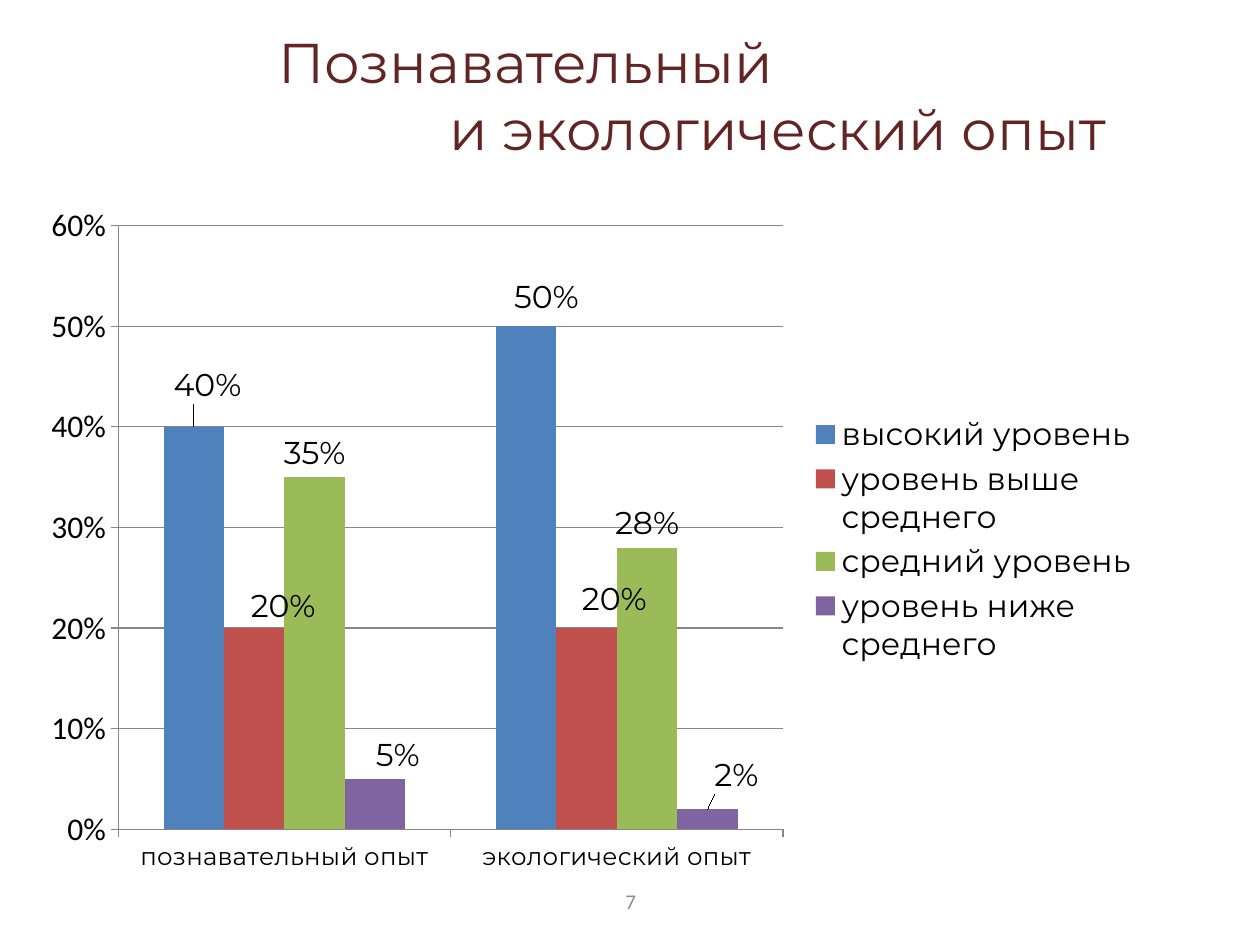
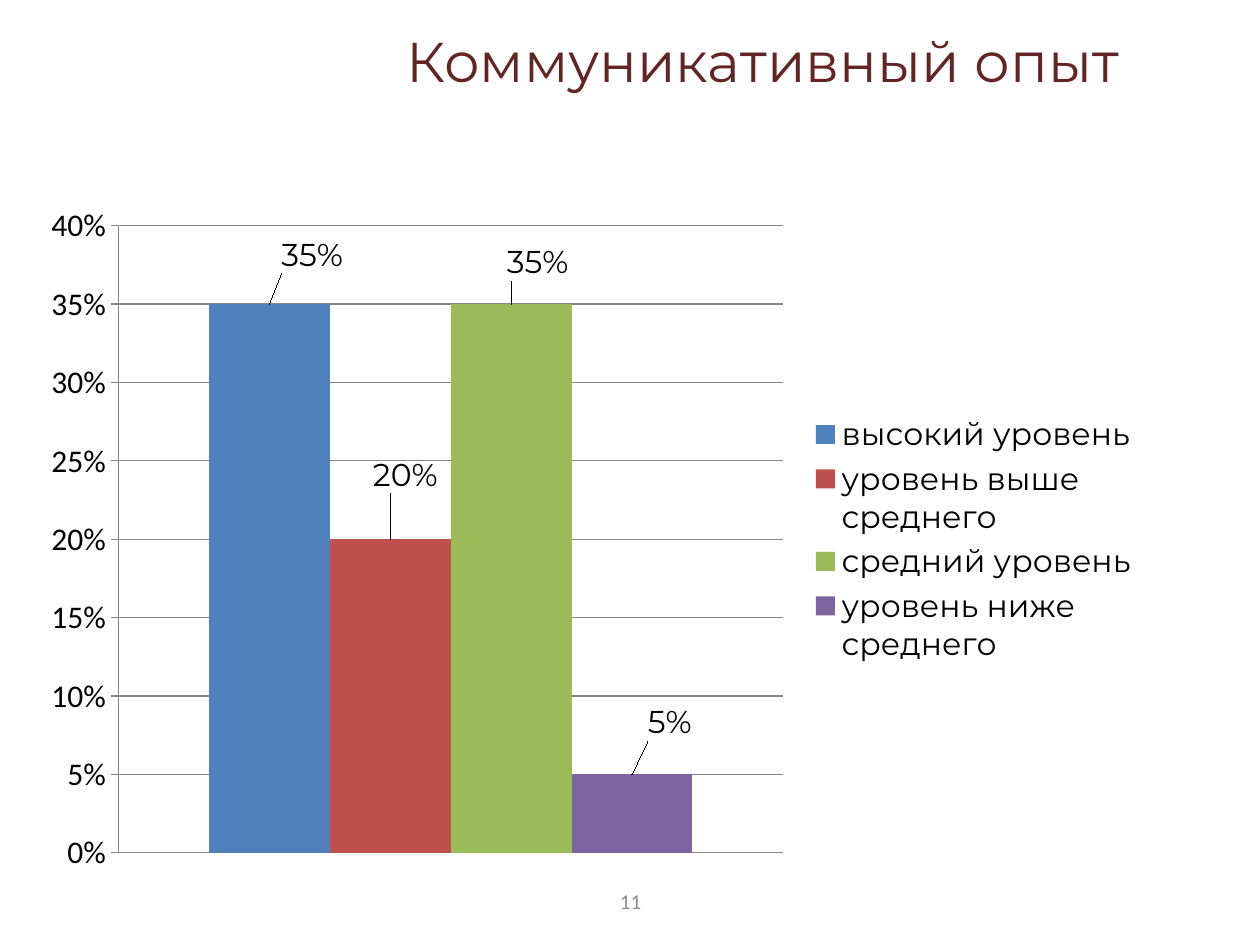
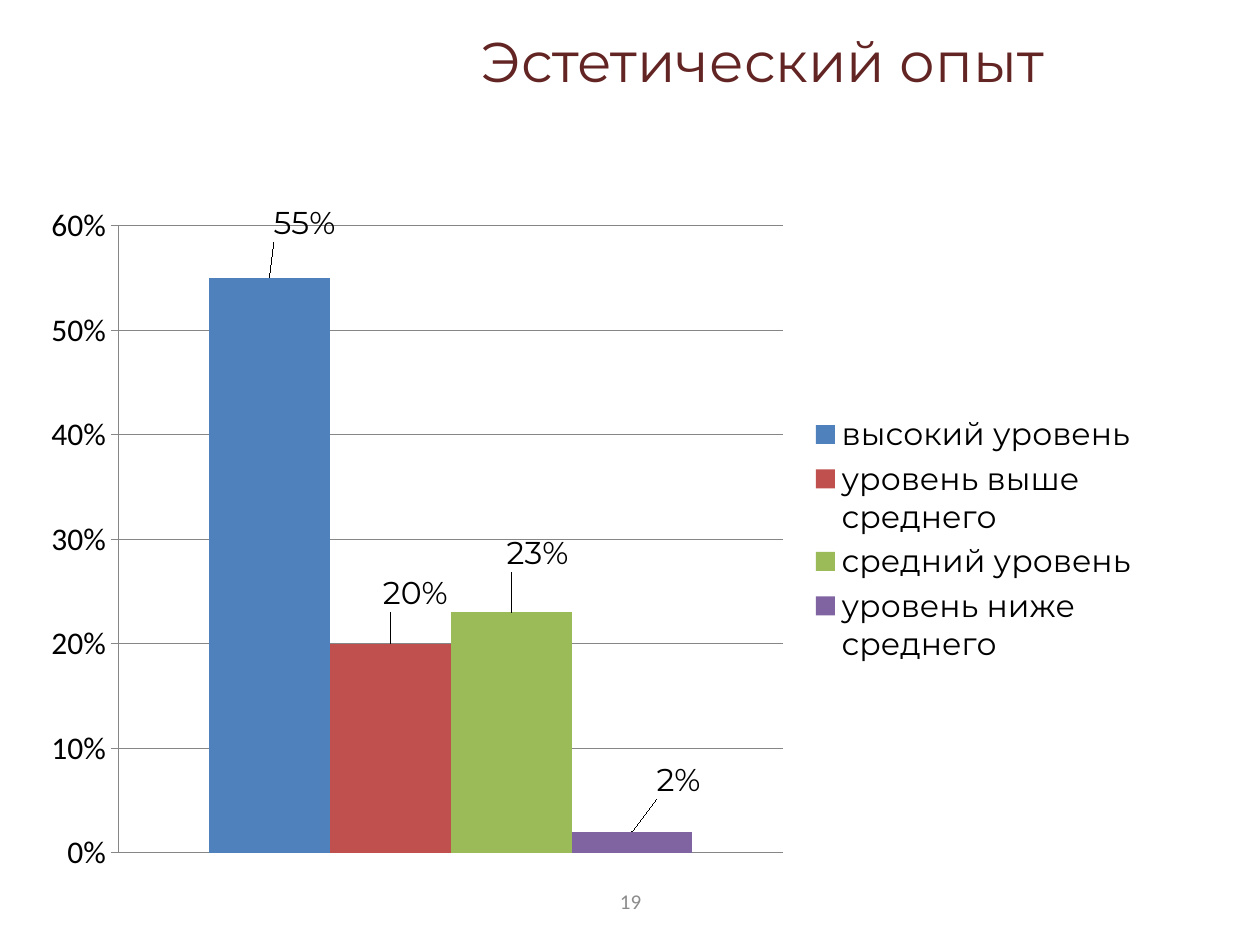
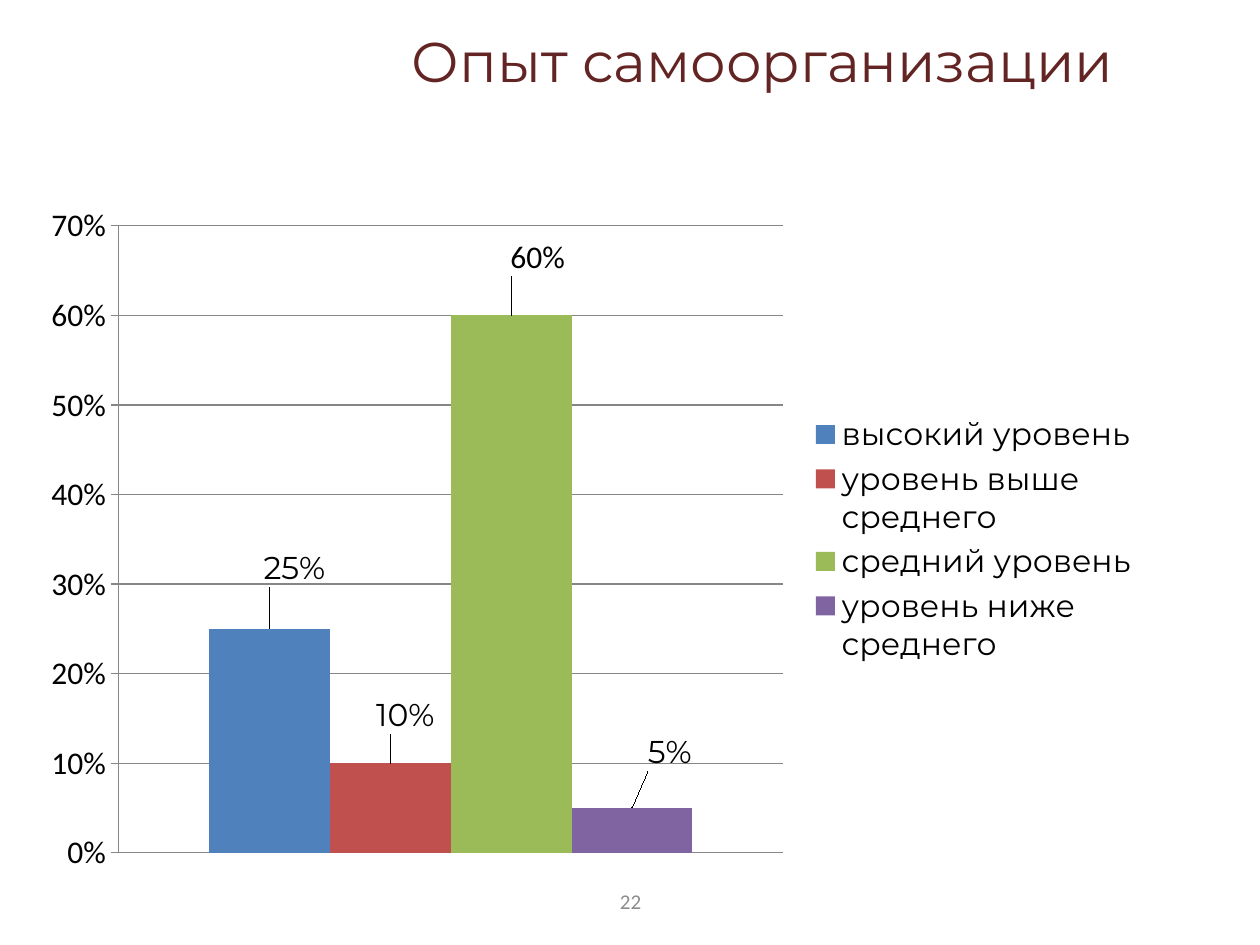
from lxml import etree
from pptx import Presentation
from pptx.chart.data import CategoryChartData
from pptx.dml.color import RGBColor
from pptx.enum import chart as ch, text as tx
from pptx.oxml.ns import qn
from pptx.util import Inches, Pt

HUES = {"title": "632523", "page": "8C8C8C", "text": "000000", "rule": "868686"}
HEAD, BODY = "Montserrat", "Calibri"
WIDE, HIGH = 8.91, 5.5  # chart size

LEVELS = [
    ("высокий уровень", "4F81BD"),
    ("уровень выше среднего", "C0504D"),
    ("средний уровень", "9BBB59"),
    ("уровень ниже среднего", "8064A2"),
]

# "vals" and "moves" hold one row per level and one item per category;
# a move shifts a label from its usual place, in inches (None keeps it there).
SLIDES = [
    {
        "page": "7",
        "title": ["Познавательный", "и экологический опыт"],
        "cats": ["познавательный опыт", "экологический опыт"],
        "vals": [(0.4, 0.5), (0.2, 0.2), (0.35, 0.28), (0.05, 0.02)],
        "moves": [
            [(0.11, -0.14), (0.16, -0.04)],
            [(0.23, 0.02), (0.22, -0.04)],
            [None, None],
            [(0.18, 0), (0.23, -0.08)],
        ],
    },
    {
        "page": "11",
        "title": ["Коммуникативный опыт"],
        "vals": [(0.35,), (0.2,), (0.35,), (0.05,)],
        "moves": [[(0.34, -0.2)], [(0.12, -0.32)], [(0.21, -0.14)], [(0.3, -0.22)]],
    },
    {
        "page": "19",
        "title": ["Эстетический опыт"],
        "vals": [(0.55,), (0.2,), (0.23,), (0.02,)],
        "moves": [[(0.28, -0.24)], [(0.2, -0.21)], [(0.21, -0.28)], [(0.37, -0.22)]],
    },
    {
        "page": "22",
        "title": ["Опыт самоорганизации"],
        "vals": [(0.25,), (0.1,), (0.6,), (0.05,)],
        "moves": [[(0.2, -0.29)], [(0.12, -0.19)], [(0.21, -0.27)], [(0.3, -0.25)]],
        "plain": 2,  # level whose labels use the body font
    },
]


def tint(name):
    return RGBColor.from_string(HUES.get(name, name))


def style(font, face, size=18, hue="text"):
    font.name, font.size = face, Pt(size)
    font.color.rgb = tint(hue)


def write(slide, lines, at, face=BODY, size=12, hue="text", grow=False):
    box = slide.shapes.add_textbox(*map(Inches, at))
    frame = box.text_frame
    frame.word_wrap = True
    frame.vertical_anchor = tx.MSO_ANCHOR.MIDDLE
    if grow:
        frame.auto_size = tx.MSO_AUTO_SIZE.SHAPE_TO_FIT_TEXT
    for i, line in enumerate(lines):
        para = frame.paragraphs[0] if i == 0 else frame.add_paragraph()
        para.alignment = tx.PP_ALIGN.CENTER
        run = para.add_run()
        run.text = line
        style(run.font, face, size, hue)
    return frame.paragraphs


def shift(label, move):
    """Move a point label by (right, down) inches."""
    node = label._get_or_add_dLbl()
    layout = node.find(qn("c:layout"))
    if layout is None:
        layout = etree.Element(qn("c:layout"))
        node.find(qn("c:idx")).addnext(layout)
    manual = etree.SubElement(layout, qn("c:manualLayout"))
    for axis, part in zip("xy", (move[0] / WIDE, move[1] / HIGH)):
        etree.SubElement(manual, qn("c:" + axis), val=f"{part:.4f}")


def rule(line):
    line.color.rgb = tint("rule")
    line.width = Pt(0.75)


def plot(slide, item):
    data = CategoryChartData(number_format="0%")
    data.categories = item.get("cats", ["1"])
    for (name, _), vals in zip(LEVELS, item["vals"]):
        data.add_series(name, vals)
    chart = slide.shapes.add_chart(
        ch.XL_CHART_TYPE.COLUMN_CLUSTERED,
        *map(Inches, (0.23, 1.53, WIDE, HIGH)), data).chart
    chart.has_title = False
    style(chart.font, BODY)
    chart.has_legend = True
    chart.legend.position = ch.XL_LEGEND_POSITION.RIGHT
    chart.legend.include_in_layout = False
    style(chart.legend.font, HEAD)

    cat, val = chart.category_axis, chart.value_axis
    if "cats" in item:
        style(cat.tick_labels.font, HEAD, 14)
        cat.major_tick_mark = ch.XL_TICK_MARK.OUTSIDE
        rule(cat.format.line)
    else:
        cat.visible = False
    val.major_tick_mark = ch.XL_TICK_MARK.OUTSIDE
    val.tick_labels.number_format = "0%"
    val.tick_labels.number_format_is_linked = False
    rule(val.format.line)
    rule(val.major_gridlines.format.line)

    bars = chart.plots[0]
    bars.gap_width, bars.overlap, bars.vary_by_categories = 150, 0, False
    for i, (row, (_, hue)) in enumerate(zip(bars.series, LEVELS)):
        row.format.fill.solid()
        row.format.fill.fore_color.rgb = tint(hue)
        face = BODY if i == item.get("plain") else HEAD
        labels = row.data_labels
        labels.show_value = True
        labels.number_format = "0%"
        labels.number_format_is_linked = False
        labels.position = ch.XL_LABEL_POSITION.OUTSIDE_END
        style(labels.font, face)
        for j, move in enumerate(item["moves"][i]):
            if move:
                label = row.points[j].data_label
                style(label.font, face)
                label.position = ch.XL_LABEL_POSITION.OUTSIDE_END
                shift(label, move)


def main():
    deck = Presentation()
    deck.slide_width, deck.slide_height = Inches(10), Inches(7.5)
    for item in SLIDES:
        slide = deck.slides.add_slide(deck.slide_layouts[6])
        write(slide, [item["page"]], (3.42, 6.95, 3.17, 0.4), hue="page")
        lines = item["title"]
        high = 0.64 if len(lines) == 1 else 1.18
        paras = write(slide, lines, (2.11, 0.16, 7.89, high),
                      HEAD, 32, "title", grow=True)
        if len(lines) > 1:
            paras[0].alignment = tx.PP_ALIGN.LEFT
            paras[1]._p.get_or_add_pPr().set("marL", str(Inches(0.24)))
        plot(slide, item)
    deck.save("out.pptx")


if __name__ == "__main__":
    main()
